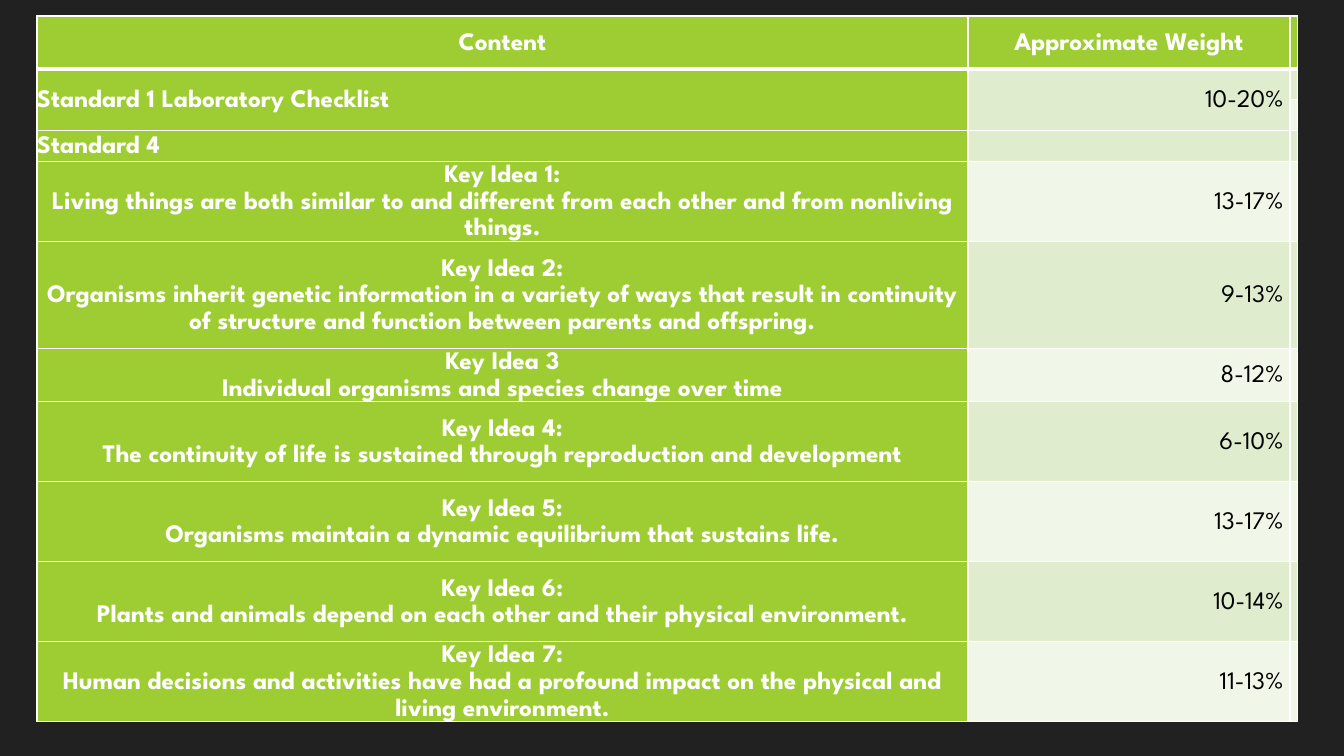
from dataclasses import dataclass
from typing import Optional

from lxml import etree
from pptx import Presentation
from pptx.dml.color import RGBColor
from pptx.enum.text import MSO_ANCHOR, PP_ALIGN
from pptx.oxml.ns import qn
from pptx.util import Emu, Pt

LEFT, CENTER, RIGHT = PP_ALIGN.LEFT, PP_ALIGN.CENTER, PP_ALIGN.RIGHT
MIDDLE = MSO_ANCHOR.MIDDLE

WIDTH, HEIGHT = 1344, 756
SCALE = 12192000 / WIDTH
FONT = "League Spartan"
COLORS = {
    "back": "212121",
    "green": "9ECD33",
    "odd": "DFEDCE",
    "even": "F0F6E8",
    "white": "FFFFFF",
    "black": "000000",
}
COLS = [931, 322, 8]
LEFT_PX, TOP_PX = 37, 16


@dataclass
class Row:
    height: int
    topic: str = ""
    weight: str = ""
    align: Optional[int] = CENTER


ROWS = [
    Row(53, "Content", "Approximate Weight"),
    Row(30, "Standard 1 Laboratory Checklist", "10-20% ", LEFT),
    Row(30),
    Row(30, "Standard 4", "", LEFT),
    Row(80, "Key Idea 1:\nLiving things are both similar to and different "
            "from each other and from nonliving things.", "13-17% "),
    Row(107, "Key Idea 2:\nOrganisms inherit genetic information in a variety "
             "of ways that result in continuity of structure and function "
             "between parents and offspring.", "9-13% "),
    Row(53, "Key Idea 3\nIndividual organisms and species change over time",
        "8-12% "),
    Row(80, "Key Idea 4:\nThe continuity of life is sustained through "
            "reproduction and development", "6-10% "),
    Row(80, "Key Idea 5:\nOrganisms maintain a dynamic equilibrium that "
            "sustains life.", "13-17% "),
    Row(80, "Key Idea 6:\nPlants and animals depend on each other and their "
            "physical environment.", "10-14% "),
    Row(80, "Key Idea 7:\nHuman decisions and activities have had a profound "
            "impact on the physical and living environment.", "11-13% "),
]


def px(size: int) -> Emu:
    return Emu(round(size * SCALE))


def rgb(name: str) -> RGBColor:
    return RGBColor.from_string(COLORS[name])


def add_edge(cell, side: str, points: int) -> None:
    props = cell._tc.get_or_add_tcPr()
    line = etree.SubElement(props, qn(f"a:ln{side}"), w=str(Pt(points)))
    fill = etree.SubElement(line, qn("a:solidFill"))
    etree.SubElement(fill, qn("a:srgbClr"), val=COLORS["white"])


def style_cell(cell, fill: str, top: int, bottom: int) -> None:
    # Borders come before the fill in the cell properties
    for side, points in (("L", 1), ("R", 1), ("T", top), ("B", bottom)):
        add_edge(cell, side, points)
    cell.fill.solid()
    cell.fill.fore_color.rgb = rgb(fill)
    cell.vertical_anchor = MIDDLE
    cell.margin_left = cell.margin_right = 0
    cell.margin_top = cell.margin_bottom = 0


def write_cell(cell, text: str, align: int, color: str, bold: bool) -> None:
    cell.text_frame.text = text
    for para in cell.text_frame.paragraphs:
        para.alignment = align
        para.line_spacing = 1.15
        font = para.font
        font.name, font.size, font.bold = FONT, Pt(18), bold
        font.color.rgb = rgb(color)


def fill_row(table, index: int, row: Row) -> None:
    head = index == 0
    band = "green" if head else "odd" if index % 2 else "even"
    table.rows[index].height = px(row.height)
    cells = [table.cell(index, col) for col in range(len(COLS))]
    for col, cell in enumerate(cells):
        style_cell(cell, band if col else "green",
                   3 if index == 1 else 1, 3 if head else 1)
    if row.topic:
        write_cell(cells[0], row.topic, row.align, "white", True)
    if row.weight:
        write_cell(cells[1], row.weight, CENTER if head else RIGHT,
                   "white" if head else "black", head)


def main() -> None:
    # Slide and background
    deck = Presentation()
    deck.slide_width, deck.slide_height = px(WIDTH), px(HEIGHT)
    slide = deck.slides.add_slide(deck.slide_layouts[6])
    slide.background.fill.solid()
    slide.background.fill.fore_color.rgb = rgb("back")

    # Weight table
    frame = slide.shapes.add_table(
        len(ROWS), len(COLS), px(LEFT_PX), px(TOP_PX),
        px(sum(COLS)), px(sum(row.height for row in ROWS)))
    table = frame.table
    table.horz_banding = False
    for col, width in zip(table.columns, COLS):
        col.width = px(width)
    for index, row in enumerate(ROWS):
        fill_row(table, index, row)

    # The laboratory row spans two bands
    for col in (0, 1):
        table.cell(1, col).merge(table.cell(2, col))

    deck.save("out.pptx")


if __name__ == "__main__":
    main()
